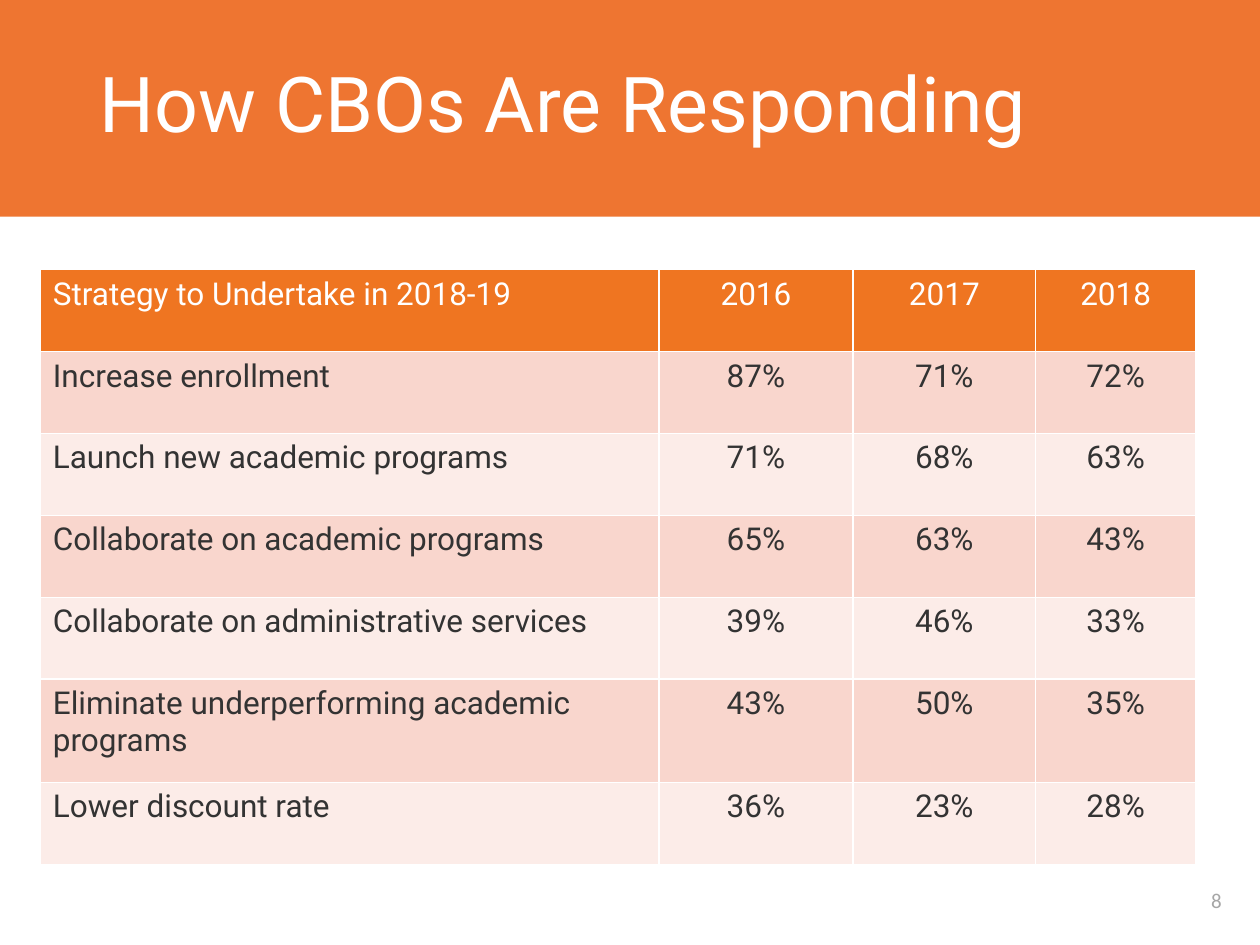
from lxml import etree
from pptx import Presentation
from pptx.dml.color import RGBColor
from pptx.enum import shapes, text
from pptx.oxml import ns
from pptx.util import Inches, Pt

TITLE = "How CBOs Are Responding"
PAGE_NUMBER = "8"
ROWS = [
    ("Strategy to Undertake in 2018-19", "2016", "2017", "2018"),
    ("Increase enrollment", "87%", "71%", "72%"),
    ("Launch new academic programs", "71%", "68%", "63%"),
    ("Collaborate on academic programs", "65%", "63%", "43%"),
    ("Collaborate on administrative services", "39%", "46%", "33%"),
    ("Eliminate underperforming academic programs", "43%", "50%", "35%"),
    ("Lower discount rate", "36%", "23%", "28%"),
]
COLUMN_WIDTHS = [4.91, 1.54, 1.45, 1.27]
ROW_HEIGHT, TALL_ROW_HEIGHT, TALL_ROW = 0.65, 0.82, 5

BANNER = RGBColor(0xEE, 0x75, 0x31)
HEADER = RGBColor(0xEF, 0x75, 0x21)
BANDS = [RGBColor(0xFC, 0xEC, 0xE8), RGBColor(0xF9, 0xD6, 0xCD)]
WHITE = RGBColor(0xFF, 0xFF, 0xFF)
DARK = RGBColor(0x33, 0x33, 0x33)
GRAY = RGBColor(0xA6, 0xA6, 0xA6)
LEFT, CENTER = text.PP_ALIGN.LEFT, text.PP_ALIGN.CENTER


def write(frame, words, size=18, color=DARK, font="Roboto", align=LEFT,
          anchor=text.MSO_ANCHOR.TOP, spacing=None):
    frame.word_wrap = True
    frame.vertical_anchor = anchor
    para = frame.paragraphs[0]
    para.alignment = align
    para.line_spacing = spacing
    span = para.add_run()
    span.text = words
    span.font.size = Pt(size)
    span.font.name = font
    span.font.color.rgb = color


def add_borders(cell, color=WHITE, width=1):
    properties = cell._tc.get_or_add_tcPr()
    for side in ("a:lnL", "a:lnR", "a:lnT", "a:lnB"):
        line = etree.SubElement(properties, ns.qn(side), w=str(Pt(width)))
        fill = etree.SubElement(line, ns.qn("a:solidFill"))
        etree.SubElement(fill, ns.qn("a:srgbClr"), val=str(color))


def add_strategy_table(page):
    heights = [TALL_ROW_HEIGHT if i == TALL_ROW else ROW_HEIGHT
               for i in range(len(ROWS))]
    table = page.shapes.add_table(
        len(ROWS), len(COLUMN_WIDTHS), Inches(0.32), Inches(2.14),
        Inches(sum(COLUMN_WIDTHS)), Inches(sum(heights))).table
    for column, width in zip(table.columns, COLUMN_WIDTHS):
        column.width = Inches(width)
    for i, (values, height) in enumerate(zip(ROWS, heights)):
        table.rows[i].height = Inches(height)
        for j, value in enumerate(values):
            cell = table.cell(i, j)
            add_borders(cell)
            cell.fill.solid()
            cell.fill.fore_color.rgb = BANDS[i % 2] if i else HEADER
            write(cell.text_frame, value, color=DARK if i else WHITE,
                  align=CENTER if j else LEFT)


def main():
    deck = Presentation()
    deck.slide_width, deck.slide_height = Inches(10), Inches(7.5)
    page = deck.slides.add_slide(deck.slide_layouts[6])

    banner = page.shapes.add_shape(
        shapes.MSO_SHAPE.RECTANGLE, Inches(-0.01), 0, Inches(10.02), Inches(1.72))
    banner.shadow.inherit = False
    banner.fill.solid()
    banner.fill.fore_color.rgb = BANNER
    banner.line.fill.background()

    number_box = page.shapes.add_textbox(
        Inches(9.31), Inches(6.95), Inches(0.69), Inches(0.39))
    write(number_box.text_frame, PAGE_NUMBER, size=12, color=GRAY,
          font="Calibri", align=CENTER, anchor=text.MSO_ANCHOR.MIDDLE)

    title_box = page.shapes.add_textbox(
        Inches(0.69), 0, Inches(8.62), Inches(1.71))
    write(title_box.text_frame, TITLE, size=44, color=WHITE,
          anchor=text.MSO_ANCHOR.MIDDLE, spacing=0.9)

    add_strategy_table(page)
    deck.save("out.pptx")


if __name__ == "__main__":
    main()
